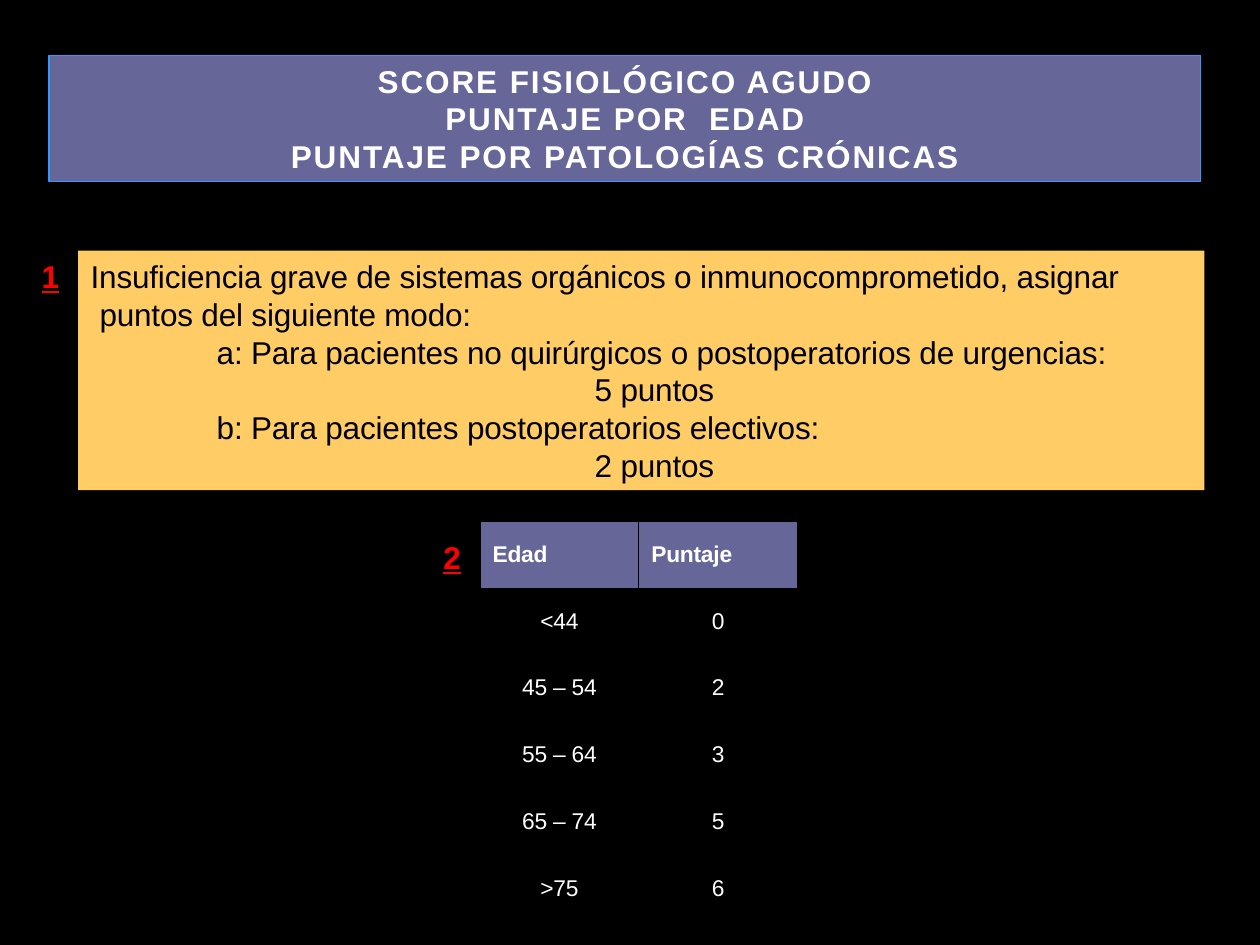
from lxml.etree import SubElement
from pptx import Presentation
from pptx.dml.color import RGBColor
from pptx.enum.shapes import MSO_SHAPE
from pptx.enum.text import MSO_ANCHOR, PP_ALIGN
from pptx.oxml.ns import qn
from pptx.util import Inches, Pt

# Content
TITLE = [
    "SCORE FISIOLÓGICO AGUDO",
    "PUNTAJE POR  EDAD",
    "PUNTAJE POR PATOLOGÍAS CRÓNICAS",
]
# Each line: text, left margin and first-line indent in inches
CHRONIC_RULES = [
    ("Insuficiencia grave de sistemas orgánicos o inmunocomprometido, asignar "
     "puntos del siguiente modo:", 0.17, -0.07),
    ("a: Para pacientes no quirúrgicos o postoperatorios de urgencias:", 1.1, 0),
    ("5 puntos", 4.1, 0),
    ("b: Para pacientes postoperatorios electivos:", 1.1, 0),
    ("2 puntos", 4.1, 0),
]
AGE_SCORES = [
    ("Edad", "Puntaje"),
    ("<44", "0"),
    ("45 – 54", "2"),
    ("55 – 64", "3"),
    ("65 – 74", "5"),
    (">75", "6"),
]
MARKERS = [("1", 0.32, 2.03), ("2", 3.51, 4.26)]

# Theme and layout (inches)
THEME = {
    "font": "Arial", "large": 18, "small": 13,
    "back": "000000", "light": "FFFFFF", "dark": "000000",
    "panel": "666698", "outline": "3398FF", "note": "FFCC66", "marker": "FF0000",
}
TITLE_BOX = (0.39, 0.44, 9.14, 1)
RULES_BOX = (0.62, 1.99, 8.94, 1.9)
TABLE_LEFT, TABLE_TOP = 3.81, 4.14
COLUMN_WIDTH, ROW_HEIGHT = 1.26, 0.53
MARKER_SIZE = (0.17, 0.33)


def color(name):
    return RGBColor.from_string(THEME[name])


def place(box):
    return [Inches(value) for value in box]


def write(paragraph, text, size="large", ink="light", bold=False, underline=False,
          align=PP_ALIGN.LEFT, spacing=0, margin=0, indent=0):
    paragraph.alignment = align
    properties = paragraph._p.get_or_add_pPr()
    properties.set("marL", str(Inches(margin)))
    properties.set("indent", str(Inches(indent)))
    run = paragraph.add_run()
    run.text = text
    font = run.font
    font.name, font.size = THEME["font"], Pt(THEME[size])
    font.bold, font.underline = bold, underline
    font.color.rgb = color(ink)
    run._r.get_or_add_rPr().set("spc", str(round(spacing * 100)))


def set_frame(frame, top):
    frame.word_wrap = True
    frame.vertical_anchor = MSO_ANCHOR.TOP
    frame.margin_left = frame.margin_right = frame.margin_bottom = 0
    frame.margin_top = Inches(top)


def next_paragraph(frame, index):
    return frame.add_paragraph() if index else frame.paragraphs[0]


def add_panel(slide, box, fill, outline=None):
    shape = slide.shapes.add_shape(MSO_SHAPE.RECTANGLE, *place(box))
    shape.shadow.inherit = False
    shape.fill.solid()
    shape.fill.fore_color.rgb = color(fill)
    if outline:
        shape.line.color.rgb = color(outline)
        shape.line.width = Pt(0.75)
    else:
        shape.line.fill.background()
    set_frame(shape.text_frame, 0.05)
    return shape.text_frame


def style_cell(cell, fill):
    cell.margin_left = cell.margin_right = cell.margin_bottom = 0
    cell.margin_top = Inches(0.16)
    cell.vertical_anchor = MSO_ANCHOR.TOP
    properties = cell._tc.get_or_add_tcPr()
    for side in ("a:lnL", "a:lnR", "a:lnT", "a:lnB"):
        line = SubElement(properties, qn(side), w=str(Pt(0.75)))
        SubElement(SubElement(line, qn("a:solidFill")), qn("a:srgbClr"), val=THEME["back"])
    if fill:
        cell.fill.solid()
        cell.fill.fore_color.rgb = color(fill)
    else:
        cell.fill.background()


def add_age_table(slide):
    rows, columns = len(AGE_SCORES), len(AGE_SCORES[0])
    box = (TABLE_LEFT, TABLE_TOP, columns * COLUMN_WIDTH, rows * ROW_HEIGHT)
    table = slide.shapes.add_table(rows, columns, *place(box)).table
    table.first_row = table.horz_banding = False
    for row, values in enumerate(AGE_SCORES):
        header = row == 0
        for column, text in enumerate(values):
            cell = table.cell(row, column)
            style_cell(cell, "panel" if header else None)
            write(cell.text_frame.paragraphs[0], text, size="small", bold=header,
                  align=PP_ALIGN.LEFT if header else PP_ALIGN.CENTER,
                  margin=0.1 if header else 0, spacing=-0.1)


def main():
    presentation = Presentation()
    presentation.slide_width, presentation.slide_height = Inches(10), Inches(7.5)
    slide = presentation.slides.add_slide(presentation.slide_layouts[6])
    slide.background.fill.solid()
    slide.background.fill.fore_color.rgb = color("back")

    # Title
    frame = add_panel(slide, TITLE_BOX, "panel", "outline")
    for index, text in enumerate(TITLE):
        write(next_paragraph(frame, index), text, bold=True,
              align=PP_ALIGN.CENTER, spacing=1.1)

    # Score by age
    add_age_table(slide)

    # Score by chronic disease
    frame = add_panel(slide, RULES_BOX, "note")
    for index, (text, margin, indent) in enumerate(CHRONIC_RULES):
        write(next_paragraph(frame, index), text, ink="dark", spacing=-0.1,
              margin=margin, indent=indent)

    # Section numbers
    for text, left, top in MARKERS:
        box = slide.shapes.add_textbox(*place((left, top, *MARKER_SIZE)))
        set_frame(box.text_frame, 0.01)
        write(box.text_frame.paragraphs[0], text, ink="marker", bold=True,
              underline=True, margin=0.01)

    presentation.save("out.pptx")


if __name__ == "__main__":
    main()
